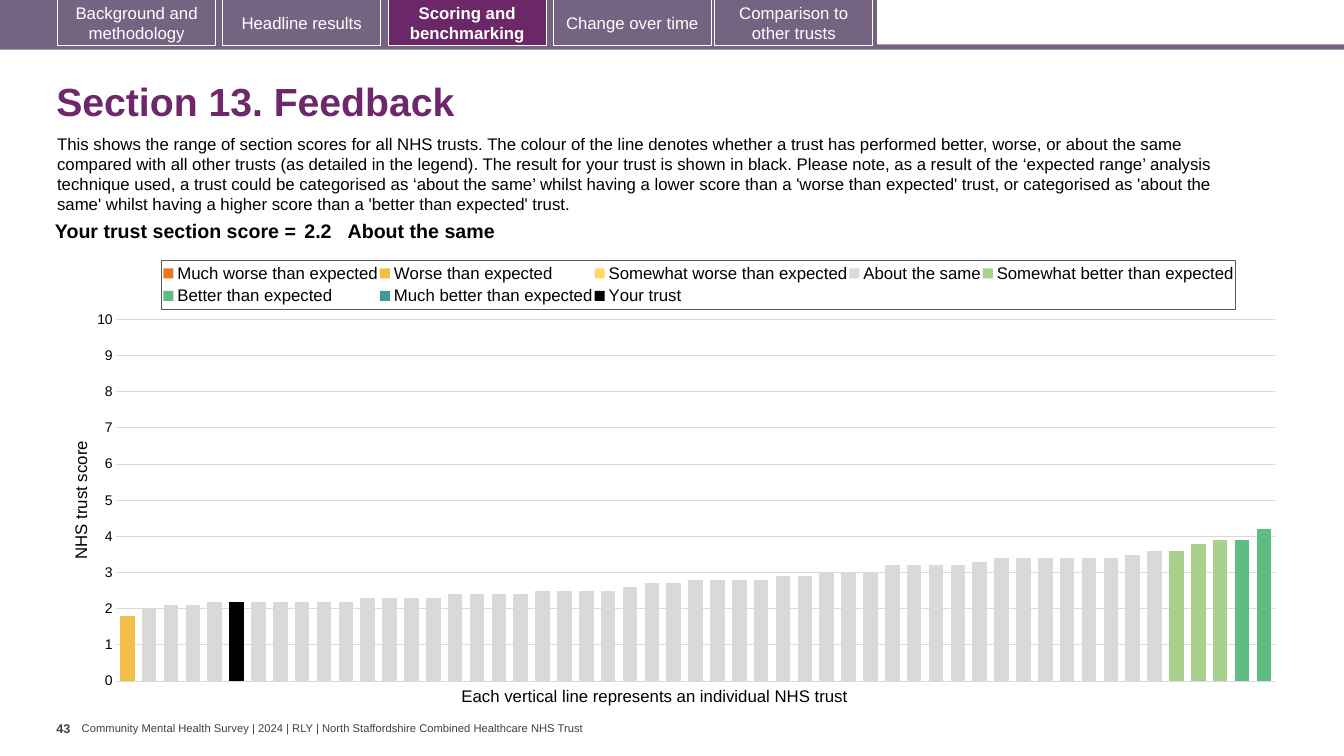
"""Build the section 13 feedback slide with the benchmarking chart of trust scores."""
import copy

import lxml.etree
import pptx
import pptx.chart.data
import pptx.dml.color
import pptx.enum.chart
import pptx.enum.shapes
import pptx.enum.text
import pptx.oxml
import pptx.oxml.ns
import pptx.util

Cm = pptx.util.Cm
Pt = pptx.util.Pt
qn = pptx.oxml.ns.qn
ALIGN = pptx.enum.text.PP_ALIGN
ANCHOR = pptx.enum.text.MSO_ANCHOR
COLORS = {
    "bar": "756382", "active": "6B2768", "title": "6D276A", "white": "FFFFFF",
    "black": "000000", "footer": "404040", "grid": "D9D9D9", "border": "595959",
}
FONT = "Arial"


def rgb(value):
    return pptx.dml.color.RGBColor.from_string(value)


def write(frame, text, size, color, bold=False, align=ALIGN.LEFT, anchor=ANCHOR.TOP,
          wrap=True, insets=(0.25, 0.13, 0.25, 0.13)):
    frame.text = text
    frame.word_wrap = wrap
    frame.vertical_anchor = anchor
    frame.margin_left, frame.margin_top, frame.margin_right, frame.margin_bottom = map(Cm, insets)
    paragraph = frame.paragraphs[0]
    paragraph.alignment = align
    paragraph.font.name = FONT
    paragraph.font.size = Pt(size)
    paragraph.font.bold = bold
    paragraph.font.color.rgb = rgb(COLORS[color])
    return paragraph


presentation = pptx.Presentation()
presentation.slide_width = Cm(33.87)
presentation.slide_height = Cm(19.05)
slide = presentation.slides.add_slide(presentation.slide_layouts[6])
shapes = slide.shapes

for top, width, height in [(1.12, 33.87, 0.13), (0, 22.1, 1.19)]:
    band = shapes.add_shape(pptx.enum.shapes.MSO_SHAPE.RECTANGLE, 0, Cm(top), Cm(width), Cm(height))
    band.shadow.inherit = False
    band.fill.solid()
    band.fill.fore_color.rgb = rgb(COLORS["bar"])
    band.line.fill.background()

tabs = [
    ("Background and methodology", 1.45), ("Headline results", 5.61),
    ("Scoring and benchmarking", 9.78), ("Change over time", 13.94),
    ("Comparison to other trusts", 18.01),
]
for label, left in tabs:
    active = label == "Scoring and benchmarking"
    tab = shapes.add_shape(pptx.enum.shapes.MSO_SHAPE.RECTANGLE, Cm(left), Cm(-0.03), Cm(3.99), Cm(1.19))
    tab.shadow.inherit = False
    tab.fill.solid()
    tab.fill.fore_color.rgb = rgb(COLORS["active" if active else "bar"])
    tab.line.color.rgb = rgb(COLORS["white"])
    tab.line.width = Pt(0.75)
    write(tab.text_frame, label, 12, "white", active, ALIGN.CENTER, ANCHOR.MIDDLE)

title = shapes.add_textbox(Cm(1.17), Cm(1.7), Cm(31.72), Cm(1.83))
write(title.text_frame, "Section 13. Feedback", 28, "title", True, anchor=ANCHOR.MIDDLE).line_spacing = 0.9

intro = shapes.add_textbox(Cm(1.19), Cm(3.23), Cm(30.81), Cm(2.31))
write(intro.text_frame,
      "This shows the range of section scores for all NHS trusts. The colour of the line denotes "
      "whether a trust has performed better, worse, or about the same compared with all other trusts "
      "(as detailed in the legend). The result for your trust is shown in black. Please note, as a "
      "result of the ‘expected range’ analysis technique used, a trust could be categorised as ‘about "
      "the same’ whilst having a lower score than a 'worse than expected' trust, or categorised as "
      "'about the same' whilst having a higher score than a 'better than expected' trust.",
      12, "black")

about_the_same = [
    2, 2.1, 2.1, 2.2, 2.2, 2.2, 2.2, 2.2, 2.2, 2.2, 2.3, 2.3, 2.3, 2.3, 2.4, 2.4,
    2.4, 2.4, 2.5, 2.5, 2.5, 2.5, 2.6, 2.7, 2.7, 2.8, 2.8, 2.8, 2.8, 2.9, 2.9, 3,
    3, 3, 3.2, 3.2, 3.2, 3.2, 3.3, 3.4, 3.4, 3.4, 3.4, 3.4, 3.4, 3.5, 3.6,
]
trust_count = 53
score_bands = [
    ("Much worse than expected", "E87722", 0, []),
    ("Worse than expected", "F1BE48", 0, [1.8]),
    ("Somewhat worse than expected", "FFD966", 0, []),
    ("About the same", "D9D9D9", 1, about_the_same),
    ("Somewhat better than expected", "A9D18E", 48, [3.6, 3.8, 3.9]),
    ("Better than expected", "5FBD83", 51, [3.9, 4.2]),
    ("Much better than expected", "419999", 0, []),
    ("Your trust", "000000", 5, [2.18]),
]
chart_data = pptx.chart.data.CategoryChartData()
chart_data.categories = [str(number) for number in range(1, trust_count + 1)]
for name, color, start, scores in score_bands:
    chart_data.add_series(name, [None] * start + scores + [None] * (trust_count - start - len(scores)))
chart = shapes.add_chart(pptx.enum.chart.XL_CHART_TYPE.COLUMN_CLUSTERED,
                         Cm(1.7), Cm(6.27), Cm(30.86), Cm(11.28), chart_data).chart
chart.has_title = False
chart.font.name = FONT
chart.font.size = Pt(10)
chart.font.color.rgb = rgb(COLORS["black"])
plot = chart.plots[0]
plot.gap_width = 50
plot.overlap = 100
plot.vary_by_categories = False
for series, (name, color, start, scores) in zip(plot.series, score_bands):
    series.format.fill.solid()
    series.format.fill.fore_color.rgb = rgb(color)
    series.invert_if_negative = False

chart.category_axis.visible = False
score_axis = chart.value_axis
score_axis.minimum_scale = 0
score_axis.maximum_scale = 10
score_axis.major_unit = 1
score_axis.major_tick_mark = pptx.enum.chart.XL_TICK_MARK.NONE
score_axis.tick_labels.number_format = "0"
score_axis.tick_labels.number_format_is_linked = False
score_axis.format.line.fill.background()

plot_area = chart.element.find(".//" + qn("c:plotArea"))
bars = plot_area.find(qn("c:barChart"))
trust_bars = copy.deepcopy(bars)
bars.remove(bars.findall(qn("c:ser"))[-1])
for element in trust_bars.findall(qn("c:ser"))[:-1]:
    trust_bars.remove(element)
bars.addnext(trust_bars)
right_axes = [copy.deepcopy(plot_area.find(qn(tag))) for tag in ("c:valAx", "c:catAx")]
for axis in right_axes:
    plot_area.findall(qn("c:valAx"))[-1].addnext(axis)
new_ids = {axis.find(qn("c:axId")).get("val"): str(number) for number, axis in enumerate(right_axes, 501)}
for part in [trust_bars, *right_axes]:
    for element in part.findall(qn("c:axId")) + part.findall(qn("c:crossAx")):
        element.set("val", new_ids[element.get("val")])
right_axis = right_axes[0]
right_axis.remove(right_axis.find(qn("c:majorGridlines")))
right_axis.find(qn("c:axPos")).set("val", "r")
right_axis.find(qn("c:tickLblPos")).set("val", "none")
right_axis.find(qn("c:crosses")).set("val", "max")

gridlines = score_axis.major_gridlines.format.line
gridlines.color.rgb = rgb(COLORS["grid"])
gridlines.width = Pt(0.75)
paragraph = score_axis.axis_title.text_frame.paragraphs[0]
paragraph.text = "NHS trust score"
paragraph.font.name = FONT
paragraph.font.size = Pt(12)
paragraph.font.bold = False
paragraph.font.color.rgb = rgb(COLORS["black"])
plot_area.find(".//" + qn("c:title") + "//" + qn("a:bodyPr")).set("rot", "-5400000")

chart.has_legend = True
legend = chart.legend
legend.position = pptx.enum.chart.XL_LEGEND_POSITION.TOP
legend.include_in_layout = False
legend.font.name = FONT
legend.font.size = Pt(12)
legend.font.color.rgb = rgb(COLORS["black"])
legend_box = chart.element.find(".//" + qn("c:legend"))
placements = [(plot_area, (0.04, 0.158, 0.946, 0.808), 0), (legend_box, (0.077, 0.025, 0.877, 0.11), 1)]
for parent, fractions, position in placements:
    for element in parent.findall(qn("c:layout")):
        parent.remove(element)
    layout = lxml.etree.Element(qn("c:layout"))
    manual = lxml.etree.SubElement(layout, qn("c:manualLayout"))
    settings = [("xMode", "edge"), ("yMode", "edge"), *zip("xywh", map(str, fractions))]
    if parent is plot_area:
        settings.insert(0, ("layoutTarget", "inner"))
    for tag, value in settings:
        lxml.etree.SubElement(manual, qn("c:" + tag), val=value)
    parent.insert(position, layout)
legend_box.find(qn("c:overlay")).addnext(pptx.oxml.parse_xml(
    f'<c:spPr {pptx.oxml.ns.nsdecls("c", "a")}><a:ln w="9525"><a:solidFill>'
    f'<a:srgbClr val="{COLORS["border"]}"/></a:solidFill></a:ln></c:spPr>'))

axis_label = shapes.add_textbox(Cm(11.38), Cm(17.15), Cm(10.44), Cm(0.76))
write(axis_label.text_frame, "Each vertical line represents an individual NHS trust", 12, "black", wrap=False)

score_table = shapes.add_table(1, 3, Cm(0.89), Cm(5.46), Cm(29.69), Cm(0.79)).table
score_table.first_row = False
score_table.horz_banding = False
score_cells = [("Your trust section score =", 6.68, 0.1, ALIGN.RIGHT),
               ("2.2", 1.19, 0.1, ALIGN.LEFT), ("About the same", 21.82, 0, ALIGN.LEFT)]
for column, (text, width, inset, align) in enumerate(score_cells):
    score_table.columns[column].width = Cm(width)
    cell = score_table.cell(0, column)
    cell.fill.background()
    write(cell.text_frame, text, 14, "black", True, align)
    cell.margin_left = cell.margin_right = Cm(inset)
    cell.margin_top = cell.margin_bottom = Cm(0.1)

page_number = shapes.add_textbox(Cm(1.42), Cm(18.03), Cm(0.64), Cm(1.02))
write(page_number.text_frame, "43", 9, "footer", True, wrap=False, insets=(0, 0.13, 0, 0.13))
footer = shapes.add_textbox(Cm(2.06), Cm(18.19), Cm(12.83), Cm(0.33))
write(footer.text_frame,
      "Community Mental Health Survey | 2024 | RLY | North Staffordshire Combined Healthcare NHS Trust",
      8, "footer", anchor=ANCHOR.MIDDLE, wrap=False, insets=(0, 0, 0, 0))

presentation.save("out.pptx")
